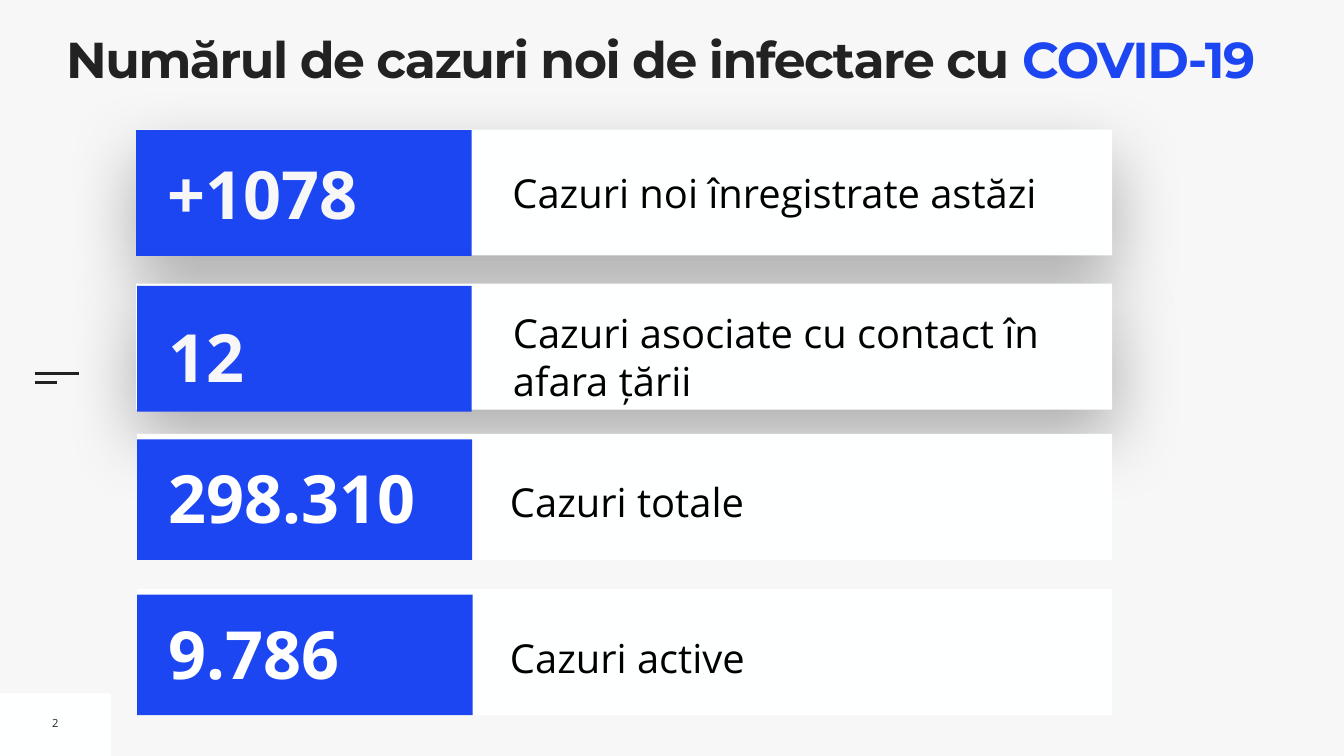
from lxml import etree
from pptx import Presentation
from pptx.dml.color import RGBColor
from pptx.enum.shapes import MSO_CONNECTOR, MSO_SHAPE
from pptx.enum.text import MSO_ANCHOR, MSO_AUTO_SIZE, PP_ALIGN
from pptx.oxml.ns import qn
from pptx.util import Pt

LINE, RECT = MSO_CONNECTOR.STRAIGHT, MSO_SHAPE.RECTANGLE
TOP, MID = MSO_ANCHOR.TOP, MSO_ANCHOR.MIDDLE
LEFT, MITTE = PP_ALIGN.LEFT, PP_ALIGN.CENTER
NONE = MSO_AUTO_SIZE.NONE
PX = 9144
HEX = {"back": "F7F7F7", "card": "FEFFFF", "blue": "1D46F3",
       "ink": "222222", "black": "000000", "white": "FFFFFF"}


def write(frame, runs, font, size, bold=False, pad=10, align=LEFT, anchor=MID):
    frame.auto_size = NONE
    frame.vertical_anchor = anchor
    frame.margin_left = frame.margin_right = pad * PX
    frame.margin_top = frame.margin_bottom = pad * PX
    para = frame.paragraphs[0]
    para.alignment = align
    for text, color in runs:
        run = para.add_run()
        run.text = text
        run.font.name = font
        run.font.size = Pt(size)
        run.font.bold = bold
        run.font.color.rgb = RGBColor.from_string(HEX[color])
    return para


def block(shapes, box, color):
    rect = shapes.add_shape(RECT, *[n * PX for n in box])
    rect.shadow.inherit = False
    rect.fill.solid()
    rect.fill.fore_color.rgb = RGBColor.from_string(HEX[color])
    rect.line.fill.background()
    return rect


deck = Presentation()
deck.slide_width, deck.slide_height = 2667 * PX, 1500 * PX
slide = deck.slides.add_slide(deck.slide_layouts[5])
slide.background.fill.solid()
slide.background.fill.fore_color.rgb = RGBColor.from_string(HEX["back"])

block(slide.shapes, (0, 1376, 220, 124), "card")
for y, end in ((741, 157), (759, 113)):
    rule = slide.shapes.add_connector(LINE, 69 * PX, y * PX, end * PX, y * PX)
    rule.line.color.rgb = RGBColor.from_string(HEX["ink"])
    rule.line.width = Pt(3)
    etree.SubElement(rule._element.spPr, qn("a:effectLst"))

page = slide.shapes.add_textbox(93 * PX, 1409 * PX, 34 * PX, 51 * PX)
write(page.text_frame, [("2", "ink")], "Open Sans", 16, align=MITTE)

title = slide.shapes.title
title.left, title.top = 131 * PX, 78 * PX
title.width, title.height = 2394 * PX, 158 * PX
para = write(title.text_frame,
             [("Numărul de cazuri noi de infectare cu ", "ink"), ("COVID-19", "blue")],
             "Montserrat", 72, True, 0, anchor=TOP)
para.line_spacing = 0.8
for run in para.runs:
    run.font._element.set("spc", "-200")

rows = [
    ("9.786", "white", "Cazuri active", (272, 1169, 1935, 250),
     (272, 1180, 666, 239), (325, 1205), (1012, 1227, 1158, 125), 0, False),
    ("+1078", "back", "Cazuri noi înregistrate astăzi", (270, 257, 1937, 250),
     (270, 258, 666, 250), (323, 292), (1007, 324, 1176, 116), 10, True),
    ("12", "back", "Cazuri asociate cu contact în afara țării", (270, 563, 1937, 250),
     (272, 567, 664, 250), (325, 617), (1008, 601, 1176, 212), 10, True),
    ("298.310", "white", "Cazuri totale", (272, 861, 1935, 250),
     (272, 872, 665, 239), (325, 896), (1012, 925, 1158, 112), 0, False),
]
for count, tint, label, card, tile, spot, area, pad, shade in rows:
    group = slide.shapes.add_group_shape().shapes
    base = block(group, card, "card")
    if shade:
        glow = etree.SubElement(
            base._element.spPr.find(qn("a:effectLst")), qn("a:outerShdw"),
            blurRad=str(Pt(100)), dist=str(Pt(40)), dir="5400000", rotWithShape="0")
        tone = etree.SubElement(glow, qn("a:srgbClr"), val=HEX["black"])
        etree.SubElement(tone, qn("a:alpha"), val="30000")
    note = group.add_textbox(*[n * PX for n in area]).text_frame
    note.word_wrap = True
    para = write(note, [(label, "black")], "Open Sans", 57, pad=pad)
    if not pad:
        para.line_spacing = 1.3
    block(group, tile, "blue")
    total = group.add_textbox(spot[0] * PX, spot[1] * PX, 603 * PX, 180 * PX).text_frame
    total.word_wrap = True
    write(total, [(count, tint)], "Open Sans", 95, True)

deck.save("out.pptx")
